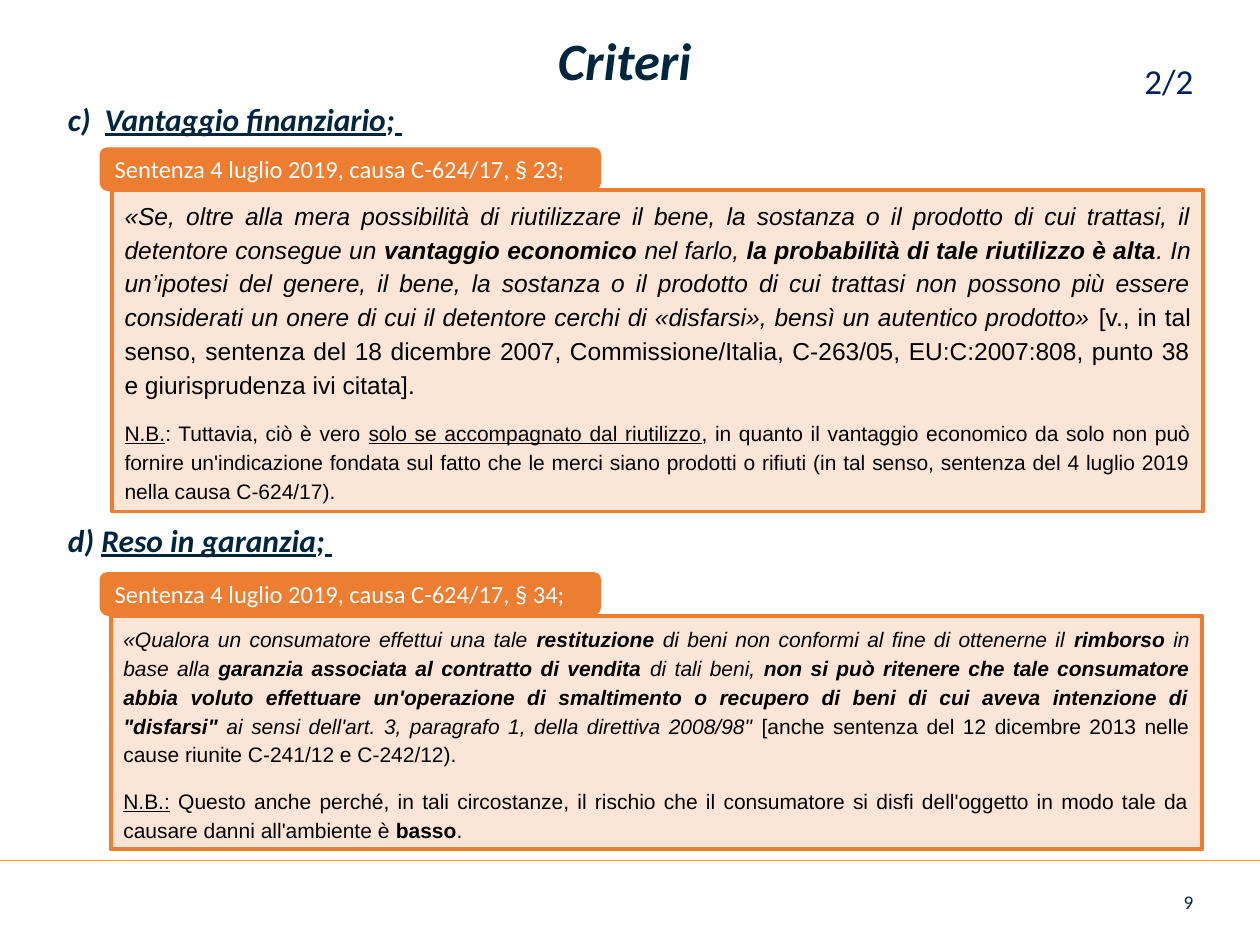
from lxml.etree import SubElement
from pptx import Presentation
from pptx.dml.color import RGBColor
from pptx.enum.shapes import MSO_CONNECTOR, MSO_SHAPE
from pptx.enum.text import MSO_ANCHOR as Anchor, PP_ALIGN as Align
from pptx.oxml.ns import qn
from pptx.util import Pt

NAVY, ORANGE, PEACH = "00263E", "ED7D31", "FBE5D6"
LEFT, WIDTH = 31.7, 657.4

CRITERIA = [
    {
        "heading": [("Vantaggio finanziario", "biu"), (";", "bi"), (" ", "biu")],
        "number_from": 3,
        "heading_top": 56,
        "source": "Sentenza 4 luglio 2019, causa C-624/17, § 23;",
        "tab_top": 84.2,
        "quote_box": (64.1, 108.7, 623.5, 183.6),
        "paragraphs": [
            (14, [
                ("«Se, oltre alla mera possibilità di riutilizzare il bene, la sostanza o il prodotto "
                 "di cui trattasi, il detentore consegue un ", "i"),
                ("vantaggio economico ", "bi"),
                ("nel farlo, ", "i"),
                ("la probabilità di tale riutilizzo è alta", "bi"),
                (". In un’ipotesi del genere, il bene, la sostanza o il prodotto di cui trattasi non "
                 "possono più essere considerati un onere di cui il detentore cerchi di «disfarsi», "
                 "bensì un autentico prodotto» ", "i"),
                ("[v., in tal senso, sentenza del 18 dicembre 2007, Commissione/Italia, C‑263/05, "
                 "EU:C:2007:808, punto 38 e giurisprudenza ivi citata].", ""),
            ]),
            (12, [
                ("N.B.", "u"),
                (": Tuttavia, ciò è vero ", ""),
                ("solo se accompagnato dal riutilizzo", "u"),
                (", in quanto il vantaggio economico da solo non può fornire un'indicazione fondata "
                 "sul fatto che le merci siano prodotti o rifiuti (in tal senso, sentenza del "
                 "4 luglio 2019 nella causa C-624/17).", ""),
            ]),
        ],
    },
    {
        "heading": [("d) ", "bi"), ("Reso in garanzia", "biu"), (";", "bi"), (" ", "biu")],
        "number_from": None,
        "heading_top": 296.5,
        "source": "Sentenza 4 luglio 2019, causa C-624/17, § 34;",
        "tab_top": 326.9,
        "quote_box": (63.4, 352.1, 623.5, 133.2),
        "paragraphs": [
            (12, [
                ("«Qualora un consumatore effettui una tale ", "i"),
                ("restituzione", "bi"),
                (" di beni non conformi al fine di ottenerne il ", "i"),
                ("rimborso", "bi"),
                (" in base alla ", "i"),
                ("garanzia associata al contratto di vendita ", "bi"),
                ("di tali beni, ", "i"),
                ("non si può ritenere che tale consumatore abbia voluto effettuare un'operazione di "
                 "smaltimento o recupero di beni di cui aveva intenzione di \"disfarsi\" ", "bi"),
                ("ai sensi dell'art. 3, paragrafo 1, della direttiva 2008/98\" ", "i"),
                ("[anche sentenza del 12 dicembre 2013 nelle cause riunite C-241/12 e C-242/12). ", ""),
            ]),
            (12, [
                ("N.B.:", "u"),
                (" Questo anche perché, in tali circostanze, il rischio che il consumatore si disfi "
                 "dell'oggetto in modo tale da causare danni all'ambiente è ", ""),
                ("basso", "b"),
                (".", ""),
            ]),
        ],
    },
]


def color(value):
    return RGBColor.from_string(value)


def place(item, left, top, width, height):
    item.left, item.top, item.width, item.height = map(Pt, (left, top, width, height))


def write(para, spans, size, ink, name="Calibri", align=Align.LEFT, spacing=None):
    para.alignment = align
    para.line_spacing = spacing
    para.font.size, para.font.name = Pt(size), name
    para.font.color.rgb = color(ink)
    for text, style in spans:
        span = para.add_run()
        span.text = text
        span.font.bold = "b" in style
        span.font.italic = "i" in style
        span.font.underline = "u" in style


def add_label(page, area, anchor=Anchor.TOP):
    box = page.shapes.add_textbox(*map(Pt, area))
    box.text_frame.word_wrap = True
    box.text_frame.vertical_anchor = anchor
    return box.text_frame.paragraphs[0]


def add_panel(page, kind, area, fill, anchor):
    panel = page.shapes.add_shape(kind, *map(Pt, area))
    panel.shadow.inherit = False
    panel.fill.solid()
    panel.fill.fore_color.rgb = color(fill)
    panel.line.fill.background()
    panel.text_frame.word_wrap = True
    panel.text_frame.vertical_anchor = anchor
    return panel


def number_paragraph(para, start):
    properties = para._p.get_or_add_pPr()
    properties.set("marL", str(Pt(21)))
    properties.set("indent", str(-Pt(21)))
    SubElement(properties, qn("a:buAutoNum"), type="alphaLcParenR", startAt=str(start))


def add_criterion(page, item):
    para = add_label(page, (LEFT, item["heading_top"], WIDTH, 28))
    if item["number_from"]:
        number_paragraph(para, item["number_from"])
    write(para, item["heading"], 18, NAVY, spacing=0.9)
    para.font.bold = para.font.italic = True

    quote = add_panel(page, MSO_SHAPE.RECTANGLE, item["quote_box"], PEACH, Anchor.TOP)
    quote.line.color.rgb = color(ORANGE)
    quote.line.width = Pt(2.25)
    frame = quote.text_frame
    for index, (size, spans) in enumerate(item["paragraphs"]):
        para = frame.add_paragraph() if index else frame.paragraphs[0]
        para.space_after = Pt(10)
        write(para, spans, size, "000000", "Arial", Align.JUSTIFY, 1.15)

    area = (56.9, item["tab_top"], 286.6, 25.2)
    tab = add_panel(page, MSO_SHAPE.ROUND_2_SAME_RECTANGLE, area, ORANGE, Anchor.MIDDLE)
    tab.adjustments[0], tab.adjustments[1] = 0.17, 0.21
    write(tab.text_frame.paragraphs[0], [(item["source"], "")], 14, "FFFFFF")


def main():
    deck = Presentation()
    deck.slide_width, deck.slide_height = Pt(720), Pt(540)
    page = deck.slides.add_slide(deck.slide_layouts[5])

    rule = page.shapes.add_connector(MSO_CONNECTOR.STRAIGHT, 0, Pt(491.8), Pt(720), Pt(491.8))
    rule.line.color.rgb = color("FFA400")
    rule.line.width = Pt(0.5)
    SubElement(rule._element.spPr, qn("a:effectLst"))

    title = page.shapes.title
    place(title, LEFT, 0.7, WIDTH, 70.6)
    frame = title.text_frame
    frame.margin_left = frame.margin_right = frame.margin_top = frame.margin_bottom = 0
    frame.vertical_anchor = Anchor.MIDDLE
    write(frame.paragraphs[0], [("Criteri ", "bi")], 30, NAVY, align=Align.CENTER, spacing=0.9)

    for item in CRITERIA:
        add_criterion(page, item)

    part = add_label(page, (636.5, 30.2, 52.6, 31.7))
    write(part, [("2/2", "")], 20, "002060", align=Align.RIGHT)
    number = add_label(page, (655.9, 501.1, 33.1, 28.8), Anchor.MIDDLE)
    write(number, [("9", "")], 11, NAVY, align=Align.RIGHT)

    deck.save("out.pptx")


if __name__ == "__main__":
    main()
